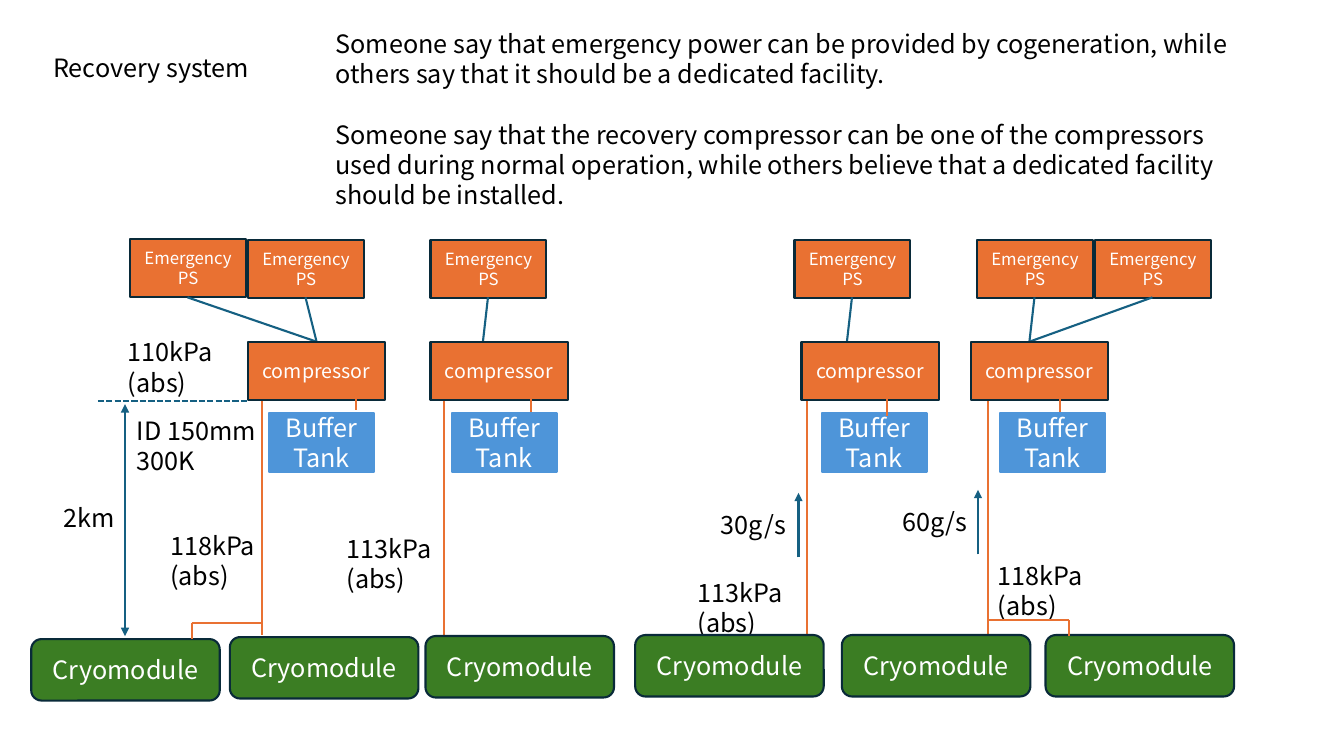
from pptx import Presentation
from pptx.dml.color import RGBColor
from pptx.enum.dml import MSO_LINE
from pptx.enum.shapes import MSO_CONNECTOR, MSO_SHAPE as SHAPE
from pptx.enum.text import MSO_ANCHOR as ANCHOR, PP_ALIGN as ALIGN
from pptx.oxml.ns import qn
from pptx.util import Emu, Pt
from lxml.etree import SubElement

PX = 9144
ORANGE, BLUE, GREEN, TEAL, NAVY = "E97132", "4E95D9", "3B7D23", "156082", "092A39"


def px(n):
    return Emu(n * PX)


def rgb(value):
    return RGBColor.from_string(value)


class Diagram:
    """Draws styled elements on one slide, with lengths in px."""

    font = "Noto Sans CJK JP"
    stroke = Pt(1.5)

    def __init__(self, s):
        self.s = s

    def set_text(self, tf, text, size, color, align, gap=0):
        tf.word_wrap = True
        tf.text = text
        for i, p in enumerate(tf.paragraphs):
            p.alignment = align
            p.line_spacing = Pt(size * 1.2)
            if i:
                p.space_before = Pt(gap)
            for r in p.runs:
                r.font.name = self.font
                r.font.size = Pt(size)
                r.font.color.rgb = rgb(color)

    def box(self, text, x, y, w, h, fill, line=NAVY, size=18, kind=SHAPE.RECTANGLE):
        sp = self.s.shapes.add_shape(kind, px(x), px(y), px(w), px(h))
        sp.shadow.inherit = False
        sp.fill.solid()
        sp.fill.fore_color.rgb = rgb(fill)
        sp.line.color.rgb = rgb(line)
        sp.line.width = self.stroke
        sp.text_frame.vertical_anchor = ANCHOR.MIDDLE
        self.set_text(sp.text_frame, text, size, "FFFFFF", ALIGN.CENTER)

    def label(self, text, x, y, w, h, gap=0):
        sp = self.s.shapes.add_textbox(px(x), px(y), px(w), px(h))
        self.set_text(sp.text_frame, text, 18, "000000", ALIGN.LEFT, gap)

    def line(self, x1, y1, x2, y2, color, ends=(), dash=None):
        sp = self.s.shapes.add_connector(
            MSO_CONNECTOR.STRAIGHT, px(x1), px(y1), px(x2), px(y2))
        sp.line.color.rgb = rgb(color)
        sp.line.width = self.stroke
        if dash:
            sp.line.dash_style = dash
        props = sp._element.spPr
        for end in ends:
            SubElement(props.find(qn("a:ln")), qn(f"a:{end}")).set("type", "triangle")
        SubElement(props, qn("a:effectLst"))


def main():
    prs = Presentation()
    prs.slide_width, prs.slide_height = px(1333), px(750)
    d = Diagram(prs.slides.add_slide(prs.slide_layouts[6]))

    for x in (260, 440, 800, 980):
        d.line(x, 396, x, 630, ORANGE)

    for x, y in ((129, 237), (246, 238), (427, 238), (788, 238), (969, 238), (1086, 238)):
        d.box("Emergency PS", x, y, 115, 58, ORANGE, size=12)

    for compressor_x, supply_x in ((314, 303), (314, 186), (479, 484),
                                   (840, 845), (1021, 1026), (1021, 1143)):
        d.line(compressor_x, 339, supply_x, 295, TEAL)

    for compressor_x, tank_x in ((246, 267), (427, 448), (795, 815), (963, 992)):
        d.box("Buffer Tank", tank_x, 410, 104, 58, BLUE, line=BLUE)
        d.box("compressor", compressor_x, 339, 136, 58, ORANGE, size=14)

    d.line(124, 631, 124, 401, TEAL, ends=("headEnd", "tailEnd"))
    for x, y in ((792, 553), (970, 550)):
        d.line(x, y, x, y - 64, TEAL, ends=("tailEnd",))

    for text, x, y in (("2km", 53, 493), ("30g/s", 705, 500), ("60g/s", 885, 497)):
        d.label(text, x, y, 91, 40)
    for pressure, x, y in ((110, 117, 329), (118, 980, 551), (113, 682, 568),
                           (118, 159, 521), (113, 334, 524)):
        d.label(f"{pressure}kPa\n(abs)", x, y, 136, 71)
    d.label("ID 150mm\n300K", 126, 407, 158, 71)
    d.label("Recovery system", 43, 47, 587, 40)
    d.label("Someone say that emergency power can be provided by cogeneration, "
            "while others say that it should be a dedicated facility.\n"
            "Someone say that the recovery compressor can be one of the compressors "
            "used during normal operation, while others believe that a dedicated "
            "facility should be installed.", 323, 23, 936, 192, gap=21.6)

    for x, y in ((31, 634), (228, 632), (422, 631), (630, 630), (835, 630), (1037, 630)):
        d.box("Cryomodule", x, y, 187, 61, GREEN, kind=SHAPE.ROUNDED_RECTANGLE)

    for branch_x, pipe_x, y in ((190, 259, 618), (1060, 981, 615)):
        d.line(branch_x, y, branch_x, y + 16, ORANGE)
        d.line(branch_x, y, pipe_x, y, ORANGE)

    for x, top, bottom in ((353, 380, 407), (527, 386, 409), (1051, 383, 409), (880, 387, 413)):
        d.line(x, top, x, bottom, ORANGE)
    d.line(97, 398, 246, 398, TEAL, dash=MSO_LINE.SQUARE_DOT)

    prs.save("out.pptx")


if __name__ == "__main__":
    main()
